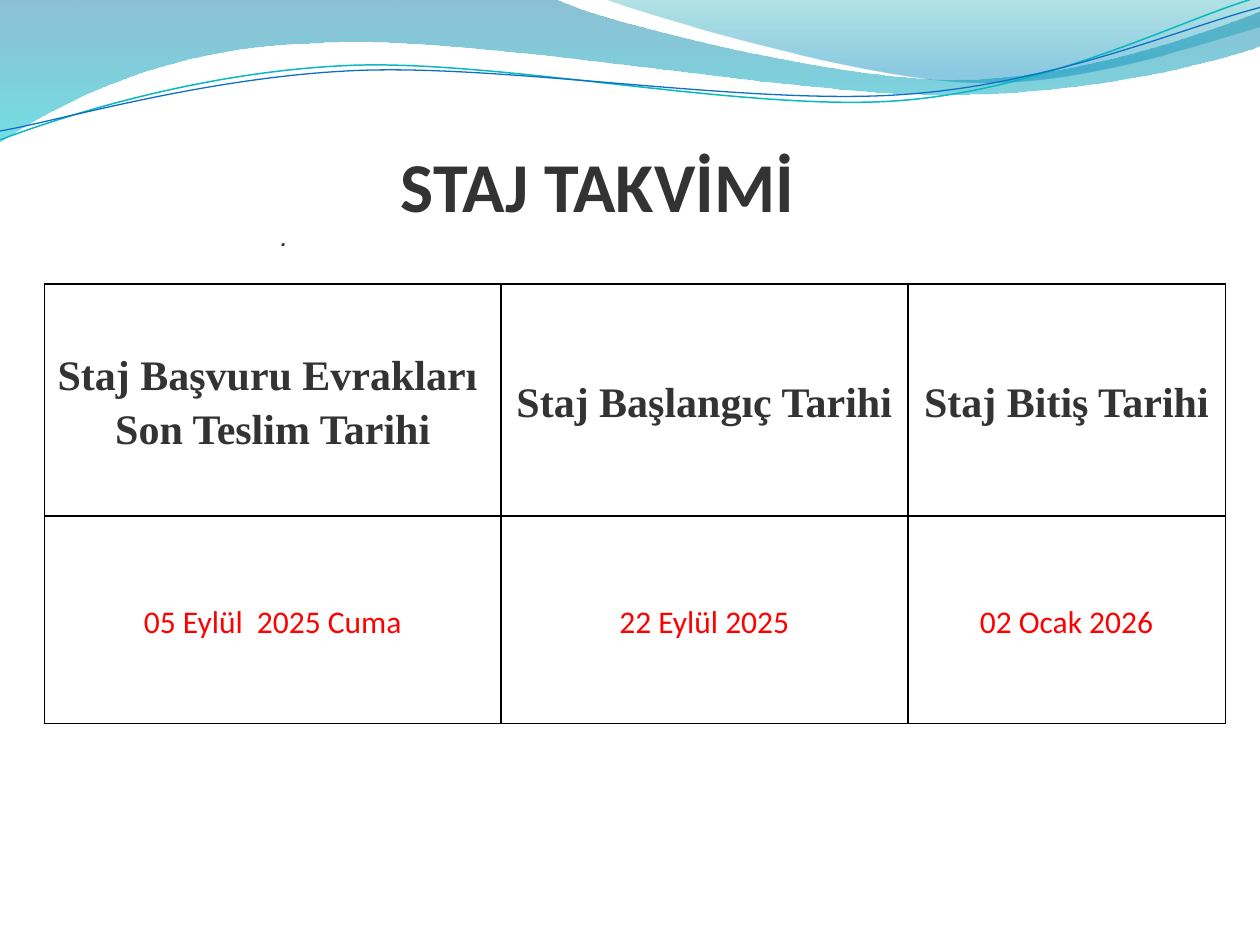
from lxml import etree
from pptx import Presentation
from pptx.dml.color import RGBColor
from pptx.enum.text import MSO_ANCHOR, MSO_AUTO_SIZE, PP_ALIGN
from pptx.oxml.ns import qn
from pptx.util import Inches, Pt

JUSTIFY, CENTER = PP_ALIGN.JUSTIFY, PP_ALIGN.CENTER
MIDDLE = MSO_ANCHOR.MIDDLE
NO_AUTOFIT = MSO_AUTO_SIZE.NONE

# Content
TITLE = "STAJ TAKVİMİ"
TITLE_MARK = "."
SCHEDULE = [
    ["Staj Başvuru Evrakları  Son Teslim Tarihi", "Staj Başlangıç Tarihi", "Staj Bitiş Tarihi"],
    ["05 Eylül  2025 Cuma", "22 Eylül 2025", "02 Ocak 2026"],
]
COLUMN_WIDTHS = [3.62, 3.23, 2.52]
ROW_HEIGHTS = [1.84, 1.65]

THEME = {
    "ink": "333333", "date": "FF0000", "border": "000000",
    "heading_font": "Calibri", "table_font": "Times New Roman", "mark_font": "Arial",
    "title_size": 40, "mark_size": 11, "header_size": 24, "date_size": 18,
    "border_width": 1,
}

# Header waves, in inches: a pair is a straight step, six numbers are a Bezier curve.
# Gradient stops are (position, colour, opacity in percent).
WAVE_BANDS = [
    {"outline": [(0, 0), (4.4, -0.01), (4.76, 0.17, 6.64, 0.63, 7.58, 0.63),
                 (8.53, 0.63, 9.58, 0.26, 10, 0.09), (10.01, 0.36),
                 (9.83, 0.44, 8.7, 0.76, 7.46, 0.75), (6.22, 0.75, 3.82, 0.28, 2.57, 0.34),
                 (1.29, 0.36, 0.46, 0.83, -0.01, 1.13), (0, 0)],
     "stops": [(0, "0074A1", 45), (1, "00C6CF", 55)]},
    {"outline": [(4.79, -0.01), (5.09, 0.11, 6.82, 0.62, 7.69, 0.65),
                 (8.56, 0.69, 9.61, 0.32, 10, 0.21), (10, 0), (4.79, -0.01)],
     "stops": [(0, "00A1A9", 30), (0.8, "008BBF", 45)]},
]
WAVE_LINES = [
    {"outline": [(0, 1.11), (0.48, 0.93, 1.58, 0.57, 2.77, 0.52),
                 (3.95, 0.47, 5.93, 0.89, 7.13, 0.8), (8.33, 0.71, 9.38, 0.15, 9.98, -0.02)],
     "color": "0AB8BF", "width": 0.85},
    {"outline": [(0, 1.04), (0.47, 0.96, 1.64, 0.61, 2.83, 0.56),
                 (4.03, 0.51, 5.97, 0.84, 7.17, 0.75), (8.36, 0.67, 9.41, 0.21, 10, 0.06)],
     "color": "0F6FC6", "width": 0.75},
]


def rgb(code):
    return RGBColor.from_string(code)


def add_wave(slide, outline, close):
    """Draw every point as a straight step, then join control points into curves."""
    points = [(Inches(x), Inches(y))
              for step in outline for x, y in zip(step[::2], step[1::2])]
    builder = slide.shapes.build_freeform(*points[0], scale=1.0)
    builder.add_line_segments(points[1:], close=close)
    wave = builder.convert_to_shape()
    wave.shadow.inherit = False

    segments = iter(list(wave._element.spPr.iter(qn("a:lnTo"))))
    for step in outline[1:]:
        segment = next(segments)
        if len(step) == 6:
            curve = etree.Element(qn("a:cubicBezTo"))
            segment.addprevious(curve)
            for part in (segment, next(segments), next(segments)):
                curve.append(part[0])
                part.getparent().remove(part)
    return wave


def add_band(slide, outline, stops):
    band = add_wave(slide, outline, close=True)
    band.line.fill.background()
    band.fill.gradient()
    band.fill.gradient_angle = 270
    for stop, (position, color, _) in zip(band.fill.gradient_stops, stops):
        stop.position = position
        stop.color.rgb = rgb(color)
    colors = list(band._element.spPr.iter(qn("a:srgbClr")))
    for color, (_, _, opacity) in zip(colors, stops):
        etree.SubElement(color, qn("a:alpha"), val=str(opacity * 1000))


def add_wave_line(slide, outline, color, width):
    line = add_wave(slide, outline, close=False)
    line.fill.background()
    line.line.color.rgb = rgb(color)
    line.line.width = Pt(width)


def write(paragraph, text, *, font, size, color, bold=False, italic=False,
          align=JUSTIFY, indent=0, spacing=1.0, after=0):
    paragraph.alignment = align
    paragraph.line_spacing = spacing
    paragraph.space_before = Pt(0)
    paragraph.space_after = Pt(after)
    if indent:
        paragraph._p.get_or_add_pPr().set("indent", str(Inches(indent)))
    run = paragraph.add_run()
    run.text = text
    run.font.name = font
    run.font.size = Pt(size)
    run.font.bold = bold
    run.font.italic = italic
    run.font.color.rgb = rgb(color)


def set_borders(cell):
    properties = cell._tc.get_or_add_tcPr()
    for i, side in enumerate(("lnL", "lnR", "lnT", "lnB")):
        border = etree.Element(qn(f"a:{side}"), w=str(Pt(THEME["border_width"])))
        fill = etree.SubElement(border, qn("a:solidFill"))
        etree.SubElement(fill, qn("a:srgbClr"), val=THEME["border"])
        properties.insert(i, border)


def fill_title(slide):
    title = slide.shapes.title
    title.left, title.top, title.width, title.height = map(Inches, (1.69, 1.08, 6.61, 0.96))
    frame = title.text_frame
    frame.auto_size = NO_AUTOFIT
    frame.word_wrap = True
    frame.vertical_anchor = MIDDLE
    write(frame.paragraphs[0], TITLE, font=THEME["heading_font"], size=THEME["title_size"],
          color=THEME["ink"], bold=True, indent=1.39)
    write(frame.add_paragraph(), TITLE_MARK, font=THEME["mark_font"], size=THEME["mark_size"],
          color=THEME["ink"], bold=True, italic=True, indent=0.44)


def add_schedule(slide):
    table = slide.shapes.add_table(
        len(ROW_HEIGHTS), len(COLUMN_WIDTHS), Inches(0.355), Inches(2.254),
        Inches(sum(COLUMN_WIDTHS)), Inches(sum(ROW_HEIGHTS))).table
    table.horz_banding = False
    for column, width in zip(table.columns, COLUMN_WIDTHS):
        column.width = Inches(width)
    header = dict(font=THEME["table_font"], size=THEME["header_size"],
                  color=THEME["ink"], bold=True)
    date = dict(font=THEME["heading_font"], size=THEME["date_size"], color=THEME["date"])
    for r, (texts, style) in enumerate(zip(SCHEDULE, (header, date))):
        table.rows[r].height = Inches(ROW_HEIGHTS[r])
        for c, text in enumerate(texts):
            cell = table.cell(r, c)
            cell.fill.background()
            cell.vertical_anchor = MIDDLE
            cell.margin_left = cell.margin_right = Inches(0.07)
            cell.margin_top = cell.margin_bottom = 0
            set_borders(cell)
            write(cell.text_frame.paragraphs[0], text, align=CENTER,
                  spacing=1.15, after=8.3, **style)


def main():
    deck = Presentation()
    deck.slide_width, deck.slide_height = Inches(10), Inches(7.5)
    slide = deck.slides.add_slide(deck.slide_layouts[5])

    # Header waves
    for band in WAVE_BANDS:
        add_band(slide, **band)
    for line in WAVE_LINES:
        add_wave_line(slide, **line)

    # Title and internship calendar
    fill_title(slide)
    add_schedule(slide)
    deck.save("out.pptx")


if __name__ == "__main__":
    main()
